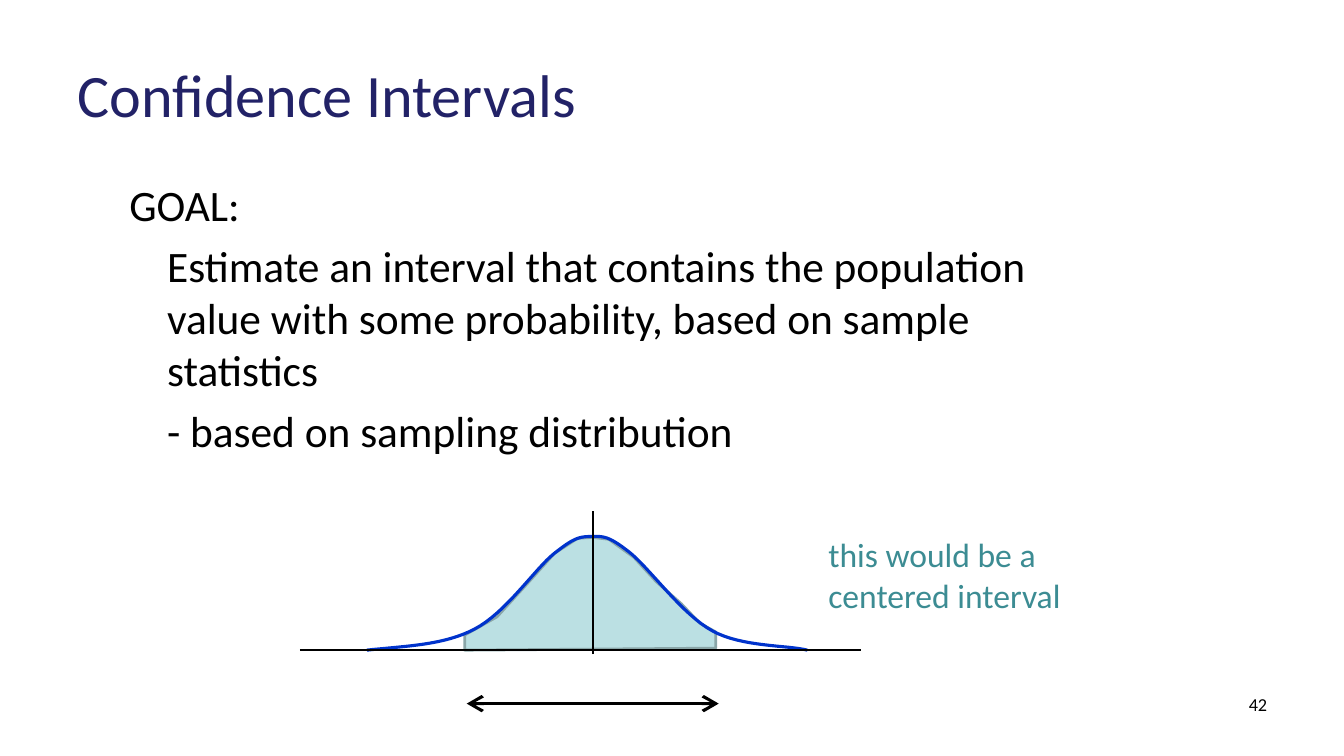
from pptx import Presentation
from pptx import util as u
from pptx.dml.color import RGBColor
from pptx.enum import shapes, text
from pptx.oxml.ns import qn
from lxml import etree

NAVY = RGBColor(0x22, 0x22, 0x67)
BLACK = RGBColor(0, 0, 0)
BLUE = RGBColor(0x00, 0x33, 0xCC)
TEAL = RGBColor(0x3C, 0x8C, 0x93)
PALE_TEAL = RGBColor(0xBB, 0xE0, 0xE3)
GREY_TEAL = RGBColor(0x8A, 0xA6, 0xA8)
Pt = u.Pt

# Distribution geometry in points
BASELINE, CENTER = 464.4, 423.4
INTERVAL = [(331.9, BASELINE), (331.9, 453.6), (355, 440.6), (376.6, 416.9),
            (396, 395.3), (412.6, 384.5), (CENTER, 383.8), (434.9, 385.2),
            (452.9, 398.2), (468.7, 415.4), (486.7, 431.3), (499.7, 445),
            (511.2, 451.4), (511.2, 463)]
# Start point, then two control points and an end point for each segment
BELL = [(262.1, BASELINE),
        (290.2, 461.5), (317.5, 460.8), (339.1, 449.3),
        (361.4, 437.8), (382.3, 406.1), (396, 395.3),
        (409.7, 384.5), (413.3, 383.4), (422.3, 383.2),
        (431.3, 383), (434.9, 383), (449.3, 394.2),
        (463.7, 405.4), (487.4, 439.2), (509, 450.7),
        (529.9, 462.2), (562.3, 460.8), (576.7, BASELINE)]


def smooth(points, steps=16):
    """Sample a chain of cubic Bezier segments."""
    sampled = [points[0]]
    for i in range(0, len(points) - 1, 3):
        a, b, c, d = points[i:i + 4]
        for t in (k / steps for k in range(1, steps + 1)):
            s = 1 - t
            sampled.append(tuple(
                s**3 * p + 3 * s * s * t * q + 3 * s * t * t * r + t**3 * e
                for p, q, r, e in zip(a, b, c, d)))
    return sampled


class SlideBuilder:
    font = "Calibri"

    def __init__(self, slide):
        self.slide = slide

    def _frame(self, shape, box, anchor):
        shape.left, shape.top, shape.width, shape.height = map(Pt, box)
        frame = shape.text_frame
        frame.word_wrap = True
        frame.auto_size = text.MSO_AUTO_SIZE.NONE
        frame.vertical_anchor = anchor
        return frame

    def _run(self, paragraph, words, size, color, align):
        paragraph.alignment = align
        run = paragraph.add_run()
        run.text = words
        run.font.name, run.font.size = self.font, Pt(size)
        run.font.color.rgb = color

    def title(self, words, box, size, color):
        frame = self._frame(self.slide.shapes.title, box, text.MSO_ANCHOR.MIDDLE)
        self._run(frame.paragraphs[0], words, size, color, text.PP_ALIGN.LEFT)

    def text(self, lines, box, size, color, align=text.PP_ALIGN.LEFT, before=0):
        """Add paragraphs given as (words, left indent)."""
        shape = self.slide.shapes.add_textbox(*map(Pt, box))
        frame = self._frame(shape, box, text.MSO_ANCHOR.TOP)
        for i, (words, indent) in enumerate(lines):
            paragraph = frame.add_paragraph() if i else frame.paragraphs[0]
            paragraph.space_before = Pt(before)
            if indent:
                paragraph._p.get_or_add_pPr().set("marL", str(Pt(indent)))
            self._run(paragraph, words, size, color, align)

    def outline(self, points, color, width, fill=None):
        start, *rest = [(Pt(x), Pt(y)) for x, y in points]
        builder = self.slide.shapes.build_freeform(*start)
        builder.add_line_segments(rest, close=fill is not None)
        shape = builder.convert_to_shape()
        shape.shadow.inherit = False
        if fill is None:
            shape.fill.background()
        else:
            shape.fill.solid()
            shape.fill.fore_color.rgb = fill
        shape.line.color.rgb, shape.line.width = color, Pt(width)

    def line(self, start, end, width, arrows=False):
        connector = self.slide.shapes.add_connector(
            shapes.MSO_CONNECTOR.STRAIGHT, *map(Pt, start + end))
        connector.line.color.rgb, connector.line.width = BLACK, Pt(width)
        properties = connector._element.spPr
        if arrows:
            for tip in ("a:headEnd", "a:tailEnd"):
                etree.SubElement(properties.find(qn("a:ln")), qn(tip),
                                 type="arrow", w="lg", len="lg")
        etree.SubElement(properties, qn("a:effectLst"))


def main():
    deck = Presentation()
    deck.slide_width, deck.slide_height = Pt(960), Pt(540)
    page = SlideBuilder(deck.slides.add_slide(deck.slide_layouts[5]))

    # Title and goal
    page.title("Confidence Intervals", (48, 21.6, 864, 90), 43, NAVY)
    page.text([("GOAL:", 0),
               ("Estimate an interval that contains the population value with "
                "some probability, based on sample statistics", 27),
               ("- based on sampling distribution", 27)],
              (85.3, 124, 715, 362.9), 31, BLACK, before=6.2)

    # Sampling distribution with its centered interval
    page.outline(INTERVAL, GREY_TEAL, 2, PALE_TEAL)
    page.outline(smooth(BELL), BLUE, 2.25)
    page.line((214.2, BASELINE), (614.9, BASELINE), 1.5)
    page.line((CENTER, 467.3), (CENTER, 365), 1.5)
    page.line((333.4, 502.6), (513.4, 502.6), 2.25, arrows=True)
    page.text([("this would be a centered interval", 0)],
              (584.6, 378, 182.2, 65.5), 24, TEAL)

    # Slide number
    page.text([("42", 0)], (688.3, 491.8, 223.9, 37.4), 13, BLACK,
              text.PP_ALIGN.RIGHT)

    deck.save("out.pptx")


if __name__ == "__main__":
    main()
